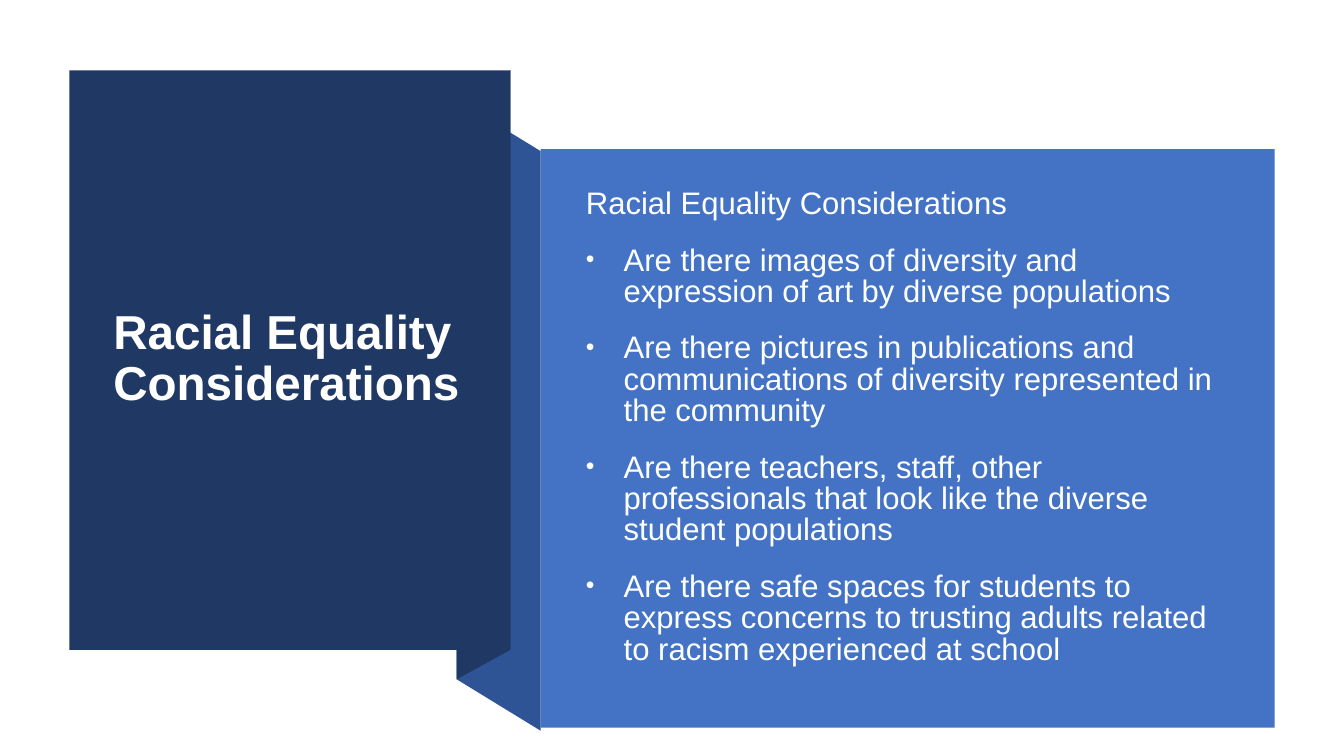
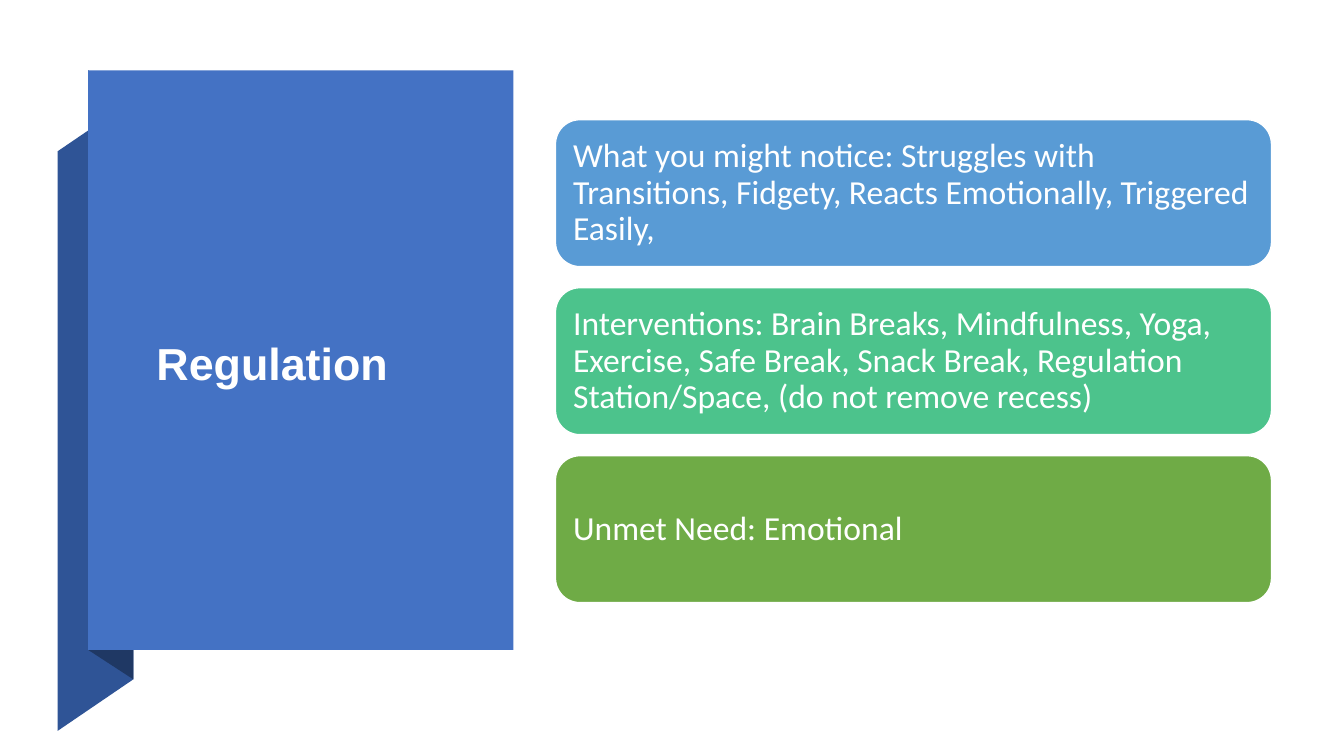
from lxml import etree
from pptx import Presentation
from pptx.dml.color import RGBColor
from pptx.enum.shapes import MSO_SHAPE
from pptx.enum.text import MSO_ANCHOR, PP_ALIGN
from pptx.oxml.ns import qn
from pptx.util import Emu, Pt

RECT = MSO_SHAPE.RECTANGLE
ROUNDED = MSO_SHAPE.ROUNDED_RECTANGLE
MIDDLE = MSO_ANCHOR.MIDDLE
LEFT = PP_ALIGN.LEFT

EMU_PER_PX = 9525
SLIDE_SIZE = (1280, 720)

WHITE = "FFFFFF"
OFF_WHITE = "FEFFFF"
NAVY = "1F3864"
DEEP_BLUE = "2F5496"
BLUE = "4472C4"
SKY = "599BD5"
MINT = "4CC38C"
GREEN = "6FAB46"

PANEL_TOP, PANEL_HEIGHT = 67, 552
RIBBON_DROP, FOLD_DROP = 77, 28
BULLET_INDENT = 36


def px(length):
    return Emu(length * EMU_PER_PX)


def rgb(hex_colour):
    return RGBColor.from_string(hex_colour)


def add_bullet(paragraph, colour):
    """Give the paragraph a small hanging bullet."""
    properties = paragraph._p.get_or_add_pPr()
    properties.set("marL", str(px(BULLET_INDENT)))
    properties.set("indent", str(-px(BULLET_INDENT)))
    bullet_colour = etree.SubElement(properties, qn("a:buClr"))
    etree.SubElement(bullet_colour, qn("a:srgbClr"), val=colour)
    etree.SubElement(properties, qn("a:buSzPct"), val="80000")
    etree.SubElement(properties, qn("a:buFont"), typeface="Arial")
    etree.SubElement(properties, qn("a:buChar"), char="•")


def write(frame, lines, *, size, font="Arial", colour=WHITE, bold=False,
          spacing=0.9, space_before=0, bullets_from=None, margins=(10, 5)):
    """Fill a text frame, one paragraph a line, bulleted from a given index."""
    frame.word_wrap = True
    frame.vertical_anchor = MIDDLE
    frame.margin_left = frame.margin_right = px(margins[0])
    frame.margin_top = frame.margin_bottom = px(margins[1])
    for index, line in enumerate(lines):
        paragraph = frame.add_paragraph() if index else frame.paragraphs[0]
        paragraph.alignment = LEFT
        paragraph.line_spacing = spacing
        paragraph.space_before = Pt(space_before if index else 0)
        if bullets_from is not None and index >= bullets_from:
            add_bullet(paragraph, colour)
        run = paragraph.add_run()
        run.text = line
        run.font.name = font
        run.font.size = Pt(size)
        run.font.bold = bold
        run.font.color.rgb = rgb(colour)


class Deck:
    def __init__(self):
        self.presentation = Presentation()
        self.presentation.slide_width, self.presentation.slide_height = map(px, SLIDE_SIZE)
        self.slide = None

    def new_slide(self):
        blank = self.presentation.slide_layouts[6]
        self.slide = self.presentation.slides.add_slide(blank)
        self.slide.background.fill.solid()
        self.slide.background.fill.fore_color.rgb = rgb(WHITE)

    def paint(self, shape, fill, outline=None):
        shape.shadow.inherit = False
        shape.fill.solid()
        shape.fill.fore_color.rgb = rgb(fill)
        if outline:
            shape.line.color.rgb = rgb(outline)
            shape.line.width = Pt(1)
        else:
            shape.line.fill.background()
        return shape

    def box(self, bounds, fill, kind=RECT, outline=None):
        shape = self.slide.shapes.add_shape(kind, *map(px, bounds))
        return self.paint(shape, fill, outline)

    def polygon(self, points, fill):
        builder = self.slide.shapes.build_freeform(*points[0], scale=EMU_PER_PX)
        builder.add_line_segments(points[1:], close=True)
        return self.paint(builder.convert_to_shape(), fill)

    def text(self, bounds, lines, **style):
        frame = self.slide.shapes.add_textbox(*map(px, bounds)).text_frame
        write(frame, lines, **style)

    def title(self, bounds, wording, size):
        self.text(bounds, [wording], size=size, bold=True)

    def ribbon(self, outer_x, inner_x, panel_edge):
        """Draw the band that folds behind a panel and comes out beside it."""
        def slanted(start_x, drop, end_x, end_drop):
            top, bottom = PANEL_TOP, PANEL_TOP + PANEL_HEIGHT
            return [(start_x, top + drop), (end_x, top + end_drop),
                    (end_x, bottom + end_drop), (start_x, bottom + drop)]

        self.polygon(slanted(outer_x, RIBBON_DROP, inner_x, FOLD_DROP), DEEP_BLUE)
        self.polygon(slanted(panel_edge, 0, inner_x, FOLD_DROP), NAVY)

    def panel(self, left, width, fill):
        self.box((left, PANEL_TOP, width, PANEL_HEIGHT), fill)

    def card(self, bounds, wording, fill):
        card = self.box(bounds, fill, ROUNDED, WHITE)
        write(card.text_frame, [wording], size=24, font="Calibri", margins=(10, 10))


def equality_slide(deck):
    heading = "Racial Equality Considerations"
    questions = [
        "Are there images of diversity and expression of art by diverse populations",
        "Are there pictures in publications and communications of diversity "
        "represented in the community",
        "Are there teachers, staff, other professionals that look like the diverse "
        "student populations",
        "Are there safe spaces for students to express concerns to trusting adults "
        "related to racism experienced at school",
    ]
    deck.new_slide()
    deck.ribbon(outer_x=515, inner_x=435, panel_edge=486)
    deck.panel(66, 420, NAVY)
    deck.title((98, 103, 356, 479), heading, 34)
    deck.box((515, 142, 699, 551), BLUE)
    deck.text((548, 180, 625, 455), [heading, *questions], size=22.2,
              colour=OFF_WHITE, spacing=0.84, space_before=18, bullets_from=1)


def regulation_slide(deck):
    cards = [
        ("What you might notice: Struggles with Transitions, Fidgety, "
         "Reacts Emotionally, Triggered Easily,", SKY),
        ("Interventions: Brain Breaks, Mindfulness, Yoga, Exercise, Safe Break, "
         "Snack Break, Regulation Station/Space, (do not remove recess)", MINT),
        ("Unmet Need: Emotional", GREEN),
    ]
    card_top, card_height, card_gap = 114, 140, 20
    deck.new_slide()
    deck.ribbon(outer_x=55, inner_x=127, panel_edge=84)
    deck.panel(84, 405, BLUE)
    deck.title((139, 160, 289, 378), "Regulation", 32)
    for row, (wording, fill) in enumerate(cards):
        top = card_top + row * (card_height + card_gap)
        deck.card((529, top, 682, card_height), wording, fill)


def main():
    deck = Deck()
    equality_slide(deck)
    regulation_slide(deck)
    deck.presentation.save("out.pptx")


if __name__ == "__main__":
    main()
